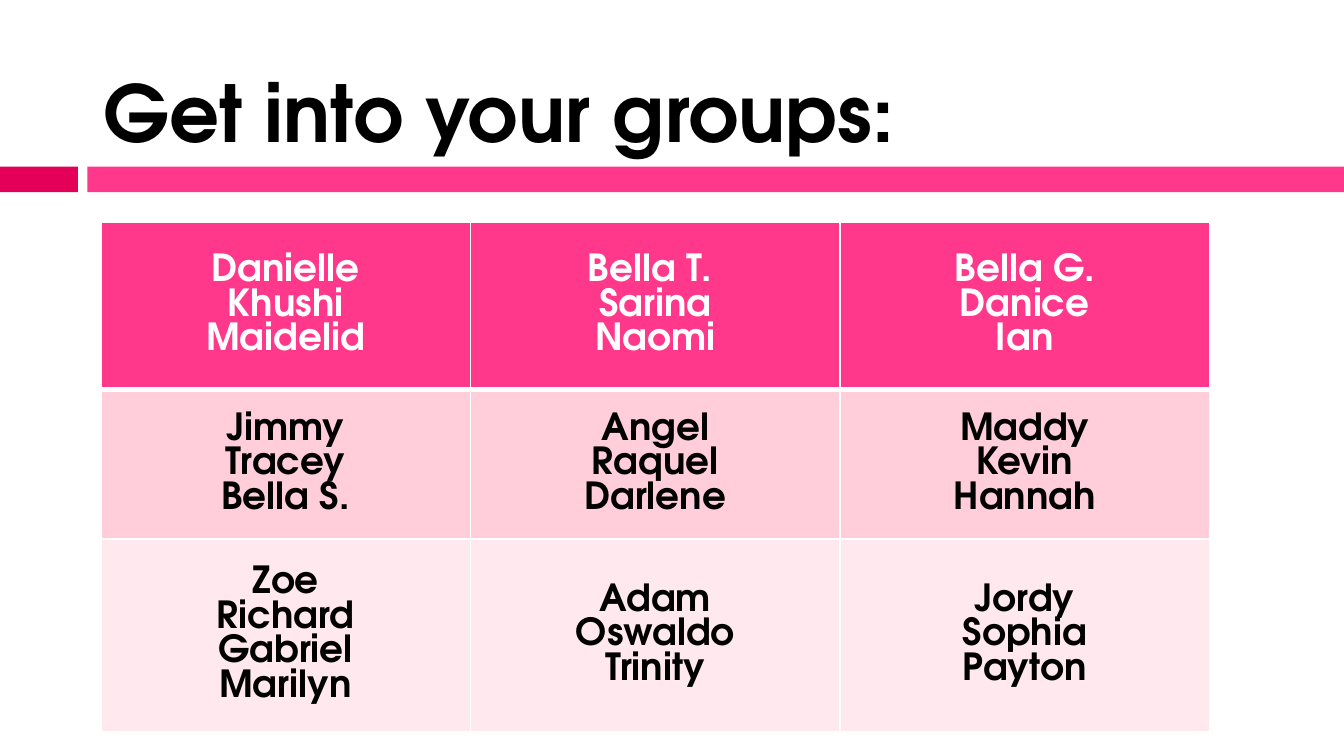
from typing import NamedTuple

from lxml import etree
from pptx import Presentation
from pptx import util as u
from pptx.dml.color import RGBColor
from pptx.enum import shapes, text
from pptx.oxml import ns

FONT = "TeX Gyre Adventor"
COLORS = {
    "accent": "E40059",
    "pink": "FF388C",
    "rose": "FFCEDA",
    "blush": "FFE8EE",
    "black": "000000",
    "white": "FFFFFF",
}


class Bar(NamedTuple):
    left: float
    width: float
    color: str


class GroupRow(NamedTuple):
    height: float
    fill: str
    ink: str
    groups: list[list[str]]


BARS = [Bar(0, 0.58, "accent"), Bar(0.65, 9.35, "pink")]
ROWS = [
    GroupRow(1.25, "pink", "white", [
        ["Danielle", "Khushi", "Maidelid"],
        ["Bella T. ", "Sarina", "Naomi"],
        ["Bella G.", "Danice", "Ian"],
    ]),
    GroupRow(1.11, "rose", "black", [
        ["Jimmy", "Tracey", "Bella S."],
        ["Angel", "Raquel", "Darlene"],
        ["Maddy", "Kevin", "Hannah"],
    ]),
    GroupRow(1.11, "blush", "black", [
        ["Zoe", "Richard", "Gabriel", "Marilyn"],
        ["Adam", "Oswaldo", "Trinity"],
        ["Jordy", "Sophia", "Payton"],
    ]),
]


def rgb(name: str) -> RGBColor:
    return RGBColor.from_string(COLORS[name])


def write_lines(frame, lines: list[str], *, size: float, color: str,
                align=text.PP_ALIGN.LEFT) -> None:
    for index, line in enumerate(lines):
        para = frame.paragraphs[0] if index == 0 else frame.add_paragraph()
        para.alignment = align
        span = para.add_run()
        span.text = line
        span.font.name = FONT
        span.font.size = u.Pt(size)
        span.font.bold = True
        span.font.color.rgb = rgb(color)


def draw_bar(page, bar: Bar) -> None:
    box = page.shapes.add_shape(
        shapes.MSO_SHAPE.RECTANGLE, u.Inches(bar.left), u.Inches(1.24),
        u.Inches(bar.width), u.Inches(0.19))
    box.shadow.inherit = False
    box.fill.solid()
    box.fill.fore_color.rgb = rgb(bar.color)
    box.line.fill.background()


def draw_title(page, title: str) -> None:
    box = page.shapes.add_textbox(
        u.Inches(0.67), u.Inches(0.13), u.Inches(8.92), u.Inches(1.1))
    box.text_frame.word_wrap = True
    box.text_frame.vertical_anchor = text.MSO_ANCHOR.BOTTOM
    write_lines(box.text_frame, [title], size=42, color="black")


def set_borders(cell, widths: dict[str, float]) -> None:
    properties = cell._tc.get_or_add_tcPr()
    for index, (side, width) in enumerate(widths.items()):
        line = etree.Element(ns.qn(f"a:ln{side}"), w=str(u.Pt(width)))
        fill = etree.SubElement(line, ns.qn("a:solidFill"))
        etree.SubElement(fill, ns.qn("a:srgbClr"), val=COLORS["white"])
        properties.insert(index, line)


def draw_groups(page, rows: list[GroupRow], *, height: float) -> None:
    holder = page.shapes.add_table(
        len(rows), len(rows[0].groups), u.Inches(0.75), u.Inches(1.65),
        u.Inches(8.25), u.Inches(height))
    table = holder.table
    for row_index, row in enumerate(rows):
        table.rows[row_index].height = u.Inches(row.height)
        top = 3 if row_index == 1 else 1
        bottom = 3 if row_index == 0 else 1
        for column, names in enumerate(row.groups):
            cell = table.cell(row_index, column)
            cell.fill.solid()
            cell.fill.fore_color.rgb = rgb(row.fill)
            cell.vertical_anchor = text.MSO_ANCHOR.MIDDLE
            set_borders(cell, {"L": 1, "R": 1, "T": top, "B": bottom})
            write_lines(cell.text_frame, names, size=20, color=row.ink,
                        align=text.PP_ALIGN.CENTER)
    holder.height = u.Inches(height)


def main() -> None:
    """Build the class groups slide."""
    deck = Presentation()
    deck.slide_width = u.Inches(10)
    deck.slide_height = deck.slide_width * 9 // 16
    page = deck.slides.add_slide(deck.slide_layouts[6])
    for bar in BARS:
        draw_bar(page, bar)
    draw_title(page, "Get into your groups:")
    draw_groups(page, ROWS, height=3.79)
    deck.save("out.pptx")


if __name__ == "__main__":
    main()
